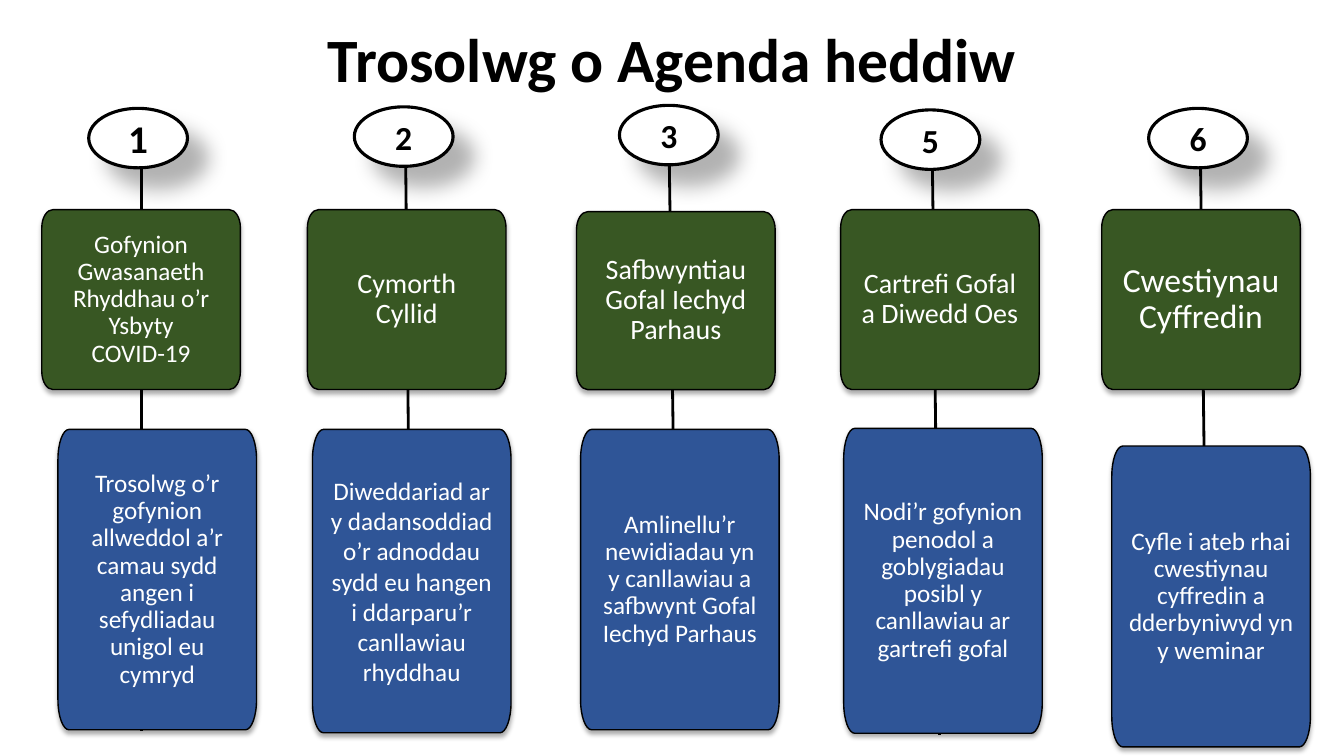
from dataclasses import dataclass

from lxml.etree import SubElement
from pptx import Presentation
from pptx.dml.color import RGBColor
from pptx.enum.shapes import MSO_CONNECTOR as Connector
from pptx.enum.shapes import MSO_SHAPE as Preset
from pptx.enum.text import MSO_ANCHOR as Anchor
from pptx.enum.text import PP_ALIGN as Align
from pptx.oxml.ns import qn
from pptx.util import Emu, Inches, Pt

COLORS = {"black": "000000", "white": "FFFFFF", "green": "385723", "blue": "2F5597"}
FONT = "Calibri"
CELL = Inches(0.1)
COLUMNS, ROWS = 133.33, 75
CARD_WIDTH, CORNER_WIDTH, CORNER_SHARE = 19.7, 1.1, 0.1
BADGE_WIDTH, BADGE_HEIGHT = 9.8, 5.9
CURVE_PULL = 0.55


@dataclass(frozen=True)
class Shadow:
    opacity: int
    blur: float
    distance: float
    angle: int


@dataclass(frozen=True)
class Badge:
    left: float
    top: float
    text: str
    size: int = 24


@dataclass(frozen=True)
class Card:
    left: float
    top: float
    height: float
    text: str
    size: int = 18
    line_spacing: float = 0.9


@dataclass(frozen=True)
class Stem:
    start: tuple[float, float]
    end: tuple[float, float]


@dataclass(frozen=True)
class AgendaItem:
    badge: Badge
    topic: Card
    detail: Card
    stem: Stem


CARD_SHADOW = Shadow(32, 3.5, 2.2, 90)
BADGE_SHADOW = Shadow(30, 15, 20, 45)

AGENDA = [
    AgendaItem(
        Badge(8.8, 10.75, "1", 28),
        Card(4.15, 20.8, 17.85, "Gofynion Gwasanaeth Rhyddhau o’r Ysbyty COVID-19"),
        Card(5.75, 42.6, 29.8, "Trosolwg o’r gofynion allweddol a’r camau sydd angen i "
             "sefydliadau unigol eu cymryd"),
        Stem((14, 16.8), (14, 72.5)),
    ),
    AgendaItem(
        Badge(35.15, 10.6, "2"),
        Card(30.5, 20.8, 17.85, "Cymorth Cyllid", 20),
        Card(31, 42.6, 30.1, "Diweddariad ar y dadansoddiad o’r adnoddau sydd eu hangen "
             "i ddarparu’r canllawiau rhyddhau", line_spacing=1.0),
        Stem((40.25, 16.3), (40.8, 72.4)),
    ),
    AgendaItem(
        Badge(61.45, 10.45, "3"),
        Card(57.2, 21, 17.65, "Safbwyntiau Gofal Iechyd Parhaus", 20),
        Card(57.6, 42.6, 29.8, "Amlinellu’r newidiadau yn y canllawiau a safbwynt Gofal "
             "Iechyd Parhaus"),
        Stem((66.4, 16.1), (67.2, 72.4)),
    ),
    AgendaItem(
        Badge(87.4, 10.9, "5"),
        Card(83.4, 20.8, 17.85, "Cartrefi Gofal a Diwedd Oes", 20),
        Card(83.7, 42.5, 30.25, "Nodi’r gofynion penodol a goblygiadau posibl y "
             "canllawiau ar gartrefi gofal"),
        Stem((92.5, 16.5), (93.2, 72.9)),
    ),
    AgendaItem(
        Badge(113.95, 10.75, "6"),
        Card(109.3, 20.8, 17.85, "Cwestiynau Cyffredin", 24),
        Card(110.3, 44.25, 29.85, "Cyfle i ateb rhai cwestiynau cyffredin a dderbyniwyd yn "
             "y weminar"),
        Stem((119.1, 16.5), (119.8, 72.6)),
    ),
]


def cells(*counts: float) -> list[Emu]:
    """Turn counts of grid cells into lengths."""
    return [Emu(round(count * CELL)) for count in counts]


def color(name: str) -> RGBColor:
    """Look up a named colour."""
    return RGBColor.from_string(COLORS[name])


def write_text(shape, text: str, *, size: int, ink: str, bold: bool = False,
               line_spacing: float = 1.0, inset: float | None = None):
    """Put centred text in a shape and return its run."""
    frame = shape.text_frame
    frame.word_wrap = True
    frame.vertical_anchor = Anchor.MIDDLE
    if inset is not None:
        frame.margin_left = frame.margin_right = Inches(inset)
        frame.margin_top = frame.margin_bottom = Inches(inset)
    paragraph = frame.paragraphs[0]
    paragraph.alignment = Align.CENTER
    paragraph.line_spacing = line_spacing
    run = paragraph.add_run()
    run.text = text
    run.font.name, run.font.size, run.font.bold = FONT, Pt(size), bold
    run.font.color.rgb = color(ink)
    return run


def paint(shape, fill: str, line_width: float, shadow: Shadow) -> None:
    """Give a shape its fill, black outline and soft shadow."""
    shape.fill.solid()
    shape.fill.fore_color.rgb = color(fill)
    shape.line.color.rgb = color("black")
    shape.line.width = Pt(line_width)
    shape.shadow.inherit = False
    effects = shape._element.spPr.find(qn("a:effectLst"))
    outer = SubElement(effects, qn("a:outerShdw"), blurRad=str(Pt(shadow.blur)),
                       dist=str(Pt(shadow.distance)), dir=str(shadow.angle * 60000),
                       rotWithShape="0")
    tint = SubElement(outer, qn("a:srgbClr"), val=COLORS["black"])
    SubElement(tint, qn("a:alpha"), val=str(shadow.opacity * 1000))


def draw_stem(slide, stem: Stem) -> None:
    """Draw the line that runs behind one column."""
    line = slide.shapes.add_connector(Connector.STRAIGHT, *cells(*stem.start, *stem.end))
    line.line.color.rgb = color("black")
    line.line.width = Pt(2)
    SubElement(line._element.spPr, qn("a:effectLst"))


def round_corners(shape) -> None:
    """Turn every other segment of a card outline into a quarter-ellipse curve."""
    points = [(int(point.get("x")), int(point.get("y")))
              for point in shape._element.iter(qn("a:pt"))]
    segments = list(shape._element.iter(qn("a:lnTo")))
    for index in range(0, len(segments), 2):
        start, end = points[index], points[index + 1]
        corner = (start[0], end[1]) if index % 4 == 0 else (end[0], start[1])
        segment = segments[index]
        segment.tag = qn("a:cubicBezTo")
        for position, anchor in enumerate((start, end)):
            x, y = (round(a + (c - a) * CURVE_PULL) for a, c in zip(anchor, corner))
            control = SubElement(segment, qn("a:pt"), x=str(x), y=str(y))
            segment.insert(position, control)


def draw_card(slide, card: Card, fill: str) -> None:
    """Draw a card whose corners are quarter ellipses."""
    corner_height = card.height * CORNER_SHARE
    right, bottom = card.left + CARD_WIDTH, card.top + card.height
    inner_left, inner_right = card.left + CORNER_WIDTH, right - CORNER_WIDTH
    inner_top, inner_bottom = card.top + corner_height, bottom - corner_height
    outline = [(card.left, inner_top), (inner_left, card.top), (inner_right, card.top),
               (right, inner_top), (right, inner_bottom), (inner_right, bottom),
               (inner_left, bottom), (card.left, inner_bottom)]
    start, *others = [cells(*point) for point in outline]
    builder = slide.shapes.build_freeform(*start)
    builder.add_line_segments(others, close=True)
    shape = builder.convert_to_shape()
    round_corners(shape)
    paint(shape, fill, 1, CARD_SHADOW)
    write_text(shape, card.text, size=card.size, ink="white",
               line_spacing=card.line_spacing, inset=0.17)


def draw_badge(slide, badge: Badge) -> None:
    """Draw a numbered ellipse."""
    shape = slide.shapes.add_shape(
        Preset.OVAL, *cells(badge.left, badge.top, BADGE_WIDTH, BADGE_HEIGHT))
    paint(shape, "white", 2.25, BADGE_SHADOW)
    run = write_text(shape, badge.text, size=badge.size, ink="black", bold=True)
    properties = run._r.get_or_add_rPr()
    outline = SubElement(properties, qn("a:ln"), w=str(Pt(0.75)))
    SubElement(SubElement(outline, qn("a:solidFill")), qn("a:srgbClr"), val=COLORS["white"])
    properties.insert(0, outline)


def main() -> None:
    """Build the agenda slide and save it."""
    presentation = Presentation()
    presentation.slide_width, presentation.slide_height = cells(COLUMNS, ROWS)
    slide = presentation.slides.add_slide(presentation.slide_layouts[6])
    for item in AGENDA:
        draw_stem(slide, item.stem)
    title = slide.shapes.add_textbox(*cells(9.2, 1.8, 115, 8.9))
    write_text(title, "Trosolwg o Agenda heddiw", size=44, ink="black", bold=True,
               line_spacing=0.9)
    for item in AGENDA:
        draw_card(slide, item.topic, "green")
        draw_card(slide, item.detail, "blue")
        draw_badge(slide, item.badge)
    presentation.save("out.pptx")


if __name__ == "__main__":
    main()
